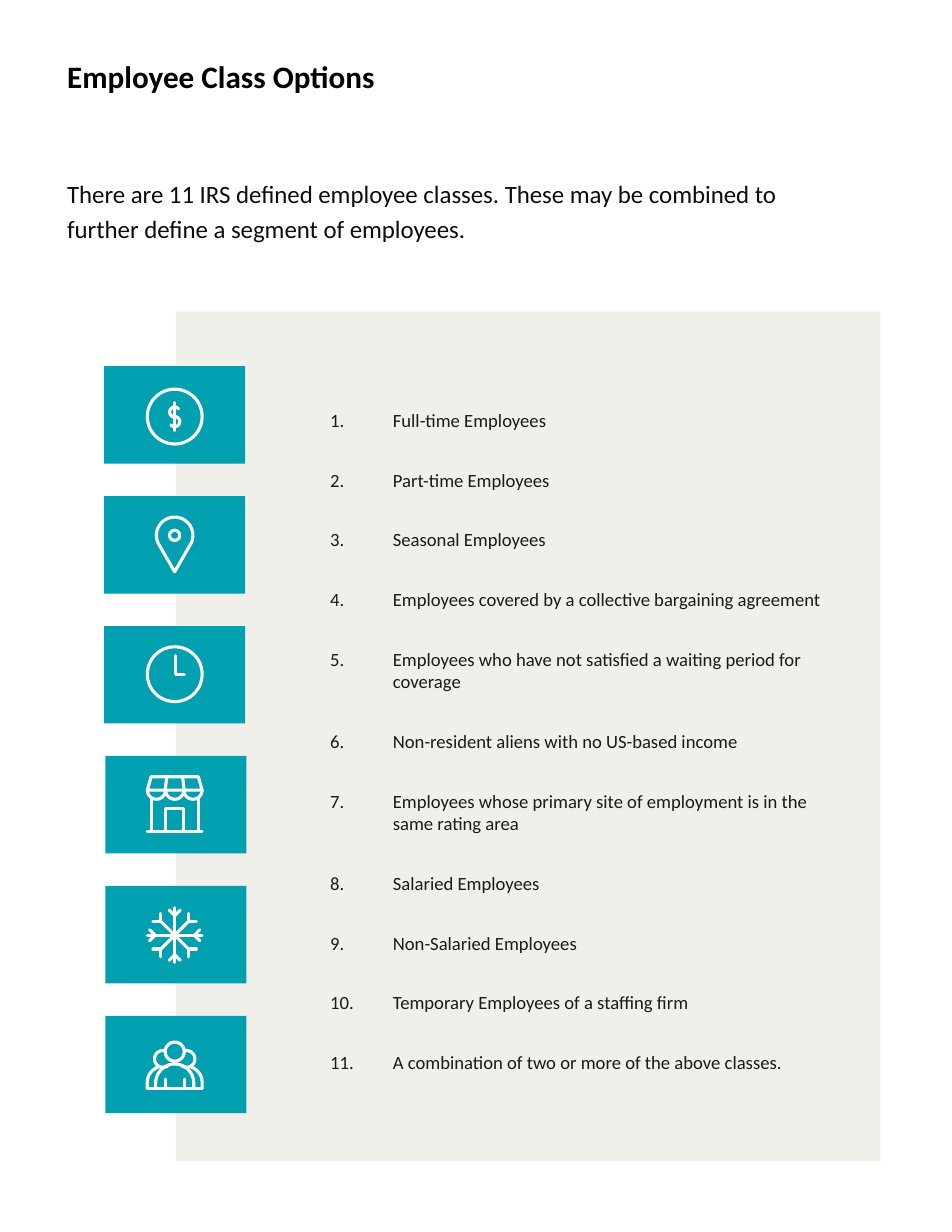
from math import cos, radians, sin

from lxml.etree import SubElement
from pptx import Presentation
from pptx.dml.color import RGBColor
from pptx.enum.shapes import MSO_SHAPE
from pptx.oxml.ns import qn
from pptx.util import Inches, Pt

BLACK = RGBColor(0x00, 0x00, 0x00)
INK = RGBColor(0x0B, 0x0C, 0x11)
LIST_INK = RGBColor(0x1A, 0x1A, 0x1A)
PANEL = RGBColor(0xF0, 0xEF, 0xE9)
TEAL = RGBColor(0x00, 0xA0, 0xB0)
WHITE = RGBColor(0xFF, 0xFF, 0xFF)

TILE_TOP, TILE_STEP = 3.27, 1.16
ICON_X = 1.56
RADIUS = 24.5  # half an icon, in hundredths of an inch

CLASSES = [
    "Full-time Employees",
    "Part-time Employees",
    "Seasonal Employees",
    "Employees covered by a collective bargaining agreement",
    "Employees who have not satisfied a waiting period for coverage",
    "Non-resident aliens with no US-based income",
    "Employees whose primary site of employment is in the same rating area",
    "Salaried Employees",
    "Non-Salaried Employees",
    "Temporary Employees of a staffing firm",
    "A combination of two or more of the above classes.",
]


def add_rect(s, left, top, width, height, color):
    sp = s.shapes.add_shape(MSO_SHAPE.RECTANGLE, Inches(left), Inches(top),
                            Inches(width), Inches(height))
    sp.shadow.inherit = False
    sp.fill.solid()
    sp.fill.fore_color.rgb = color
    sp.line.fill.background()


def number_paragraph(p, indent):
    pPr = p._p.get_or_add_pPr()
    pPr.set("marL", str(Inches(indent)))
    pPr.set("indent", str(-Inches(indent)))
    SubElement(pPr, qn("a:buAutoNum"), type="arabicPeriod")


def add_text(s, lines, left, top, width, height, size, color, bold=False,
             inset=0.1, spacing=None, after=None, indent=None):
    """Add one paragraph per line; an indent makes it a numbered list."""
    tf = s.shapes.add_textbox(Inches(left), Inches(top),
                              Inches(width), Inches(height)).text_frame
    tf.word_wrap = True
    tf.margin_left = tf.margin_right = Inches(inset)
    for i, line in enumerate(lines):
        p = tf.add_paragraph() if i else tf.paragraphs[0]
        if spacing:
            p.line_spacing = spacing
        if after:
            p.space_after = Pt(after)
        if indent:
            number_paragraph(p, indent)
        r = p.add_run()
        r.text = line
        r.font.name = "Calibri"
        r.font.size = Pt(size)
        r.font.bold = bold
        r.font.color.rgb = color


def arc(cx, cy, radius, start=0, end=360):
    """Points along an arc; angles in degrees, clockwise from the right."""
    steps = max(2, round(abs(end - start) / 8))
    angles = [radians(start + (end - start) * i / steps)
              for i in range(steps + 1)]
    return [(cx + radius * cos(a), cy + radius * sin(a)) for a in angles]


def with_mirror(*strokes):
    """The strokes together with their reflections in the vertical axis."""
    return [*strokes, *([(-x, y) for x, y in line] for line in strokes)]


def dollar():
    letter = arc(0, -4, 4.5, -40, -270) + arc(0, 4.5, 4.5, -90, 140)
    return [arc(0, 0, RADIUS), [(0, -12.5), (0, 12.5)], letter]


def pin():
    top = arc(0, -8, 16.3, 155, 385)
    return [top + [(0, RADIUS), top[0]], arc(0, -8, 4.5)]


def clock():
    return [arc(0, 0, RADIUS), [(0.5, -16.5), (0.5, 0.5), (8.5, 0.5)]]


def store():
    edge, base = -12.5, RADIUS
    awning = [(-21, -base), (21, -base), (base, edge), (-base, edge),
              (-21, -base)]
    door = [(-8, base), (-8, 3.5), (8, 3.5), (8, base)]
    scallops = [arc(x, edge, 8.1, 0, 180) for x in (-16.3, 0, 16.3)]
    sides = with_mirror([(7, -base), (8.5, edge)], [(21, -5), (21, base)])
    return [awning, door, [(-base, base), (base, base)], *scallops, *sides]


def snowflake():
    strokes = []
    for angle in range(0, 360, 45):
        length = 17.5 if angle % 90 else RADIUS
        dx, dy = cos(radians(angle)), sin(radians(angle))
        x, y = 17.5 * dx, 17.5 * dy
        barbs = [(x + 7 * cos(radians(a)), y + 7 * sin(radians(a)))
                 for a in (angle - 45, angle + 45)]
        strokes += [[(0, 0), (length * dx, length * dy)],
                    [barbs[0], (x, y), barbs[1]]]
    return strokes


def people():
    floor = 20
    body = [(-17, floor), *arc(0, 15, 17, 180, 360), (17, floor)]
    shoulder = [(-RADIUS, floor), *arc(-10, 14.5, 14.5, 180, 250)]
    head = arc(-10.5, -6.5, 7.5, 275, 50)
    sides = with_mirror(shoulder, head, [(8.5, 11.5), (8.5, floor)])
    return [arc(0, -13, 8.5), body, [(-RADIUS, floor), (RADIUS, floor)],
            *sides]


def add_icon(s, strokes, center_y):
    """Draw all strokes as one white outline centred in the icon column."""
    lines = [[(Inches(ICON_X + x / 100), Inches(center_y + y / 100))
              for x, y in line] for line in strokes]
    builder = s.shapes.build_freeform(*lines[0][0])
    for i, line in enumerate(lines):
        if i:
            builder.move_to(*line[0])
        builder.add_line_segments(line[1:], close=False)
    sp = builder.convert_to_shape()
    sp.shadow.inherit = False
    sp.fill.background()
    sp.line.color.rgb = WHITE
    sp.line.width = Pt(2)
    ln = sp.line._get_or_add_ln()
    ln.set("cap", "rnd")
    SubElement(ln, qn("a:round"))


def main():
    prs = Presentation()
    prs.slide_width, prs.slide_height = Inches(8.5), Inches(11)
    s = prs.slides.add_slide(prs.slide_layouts[6])

    add_rect(s, 1.57, 2.78, 6.29, 7.59, PANEL)
    add_text(s, ["Employee Class Options"], 0.55, 0.46, 5.7, 0.44,
             size=20, color=BLACK, bold=True, inset=0.05)
    add_text(s, ["There are 11 IRS defined employee classes. These may be "
                 "combined to further define a segment of employees."],
             0.55, 1.49, 6.74, 0.73, size=16, color=INK, inset=0.05,
             spacing=1.2)
    add_text(s, CLASSES, 2.85, 3.6, 4.63, 6.29, size=12, color=LIST_INK,
             after=24, indent=0.56)

    icons = [(dollar, 3.72), (pin, 4.86), (clock, 6.02),
             (store, 7.18), (snowflake, 8.35), (people, 9.52)]
    for i, (icon, center_y) in enumerate(icons):
        left = 0.93 if i < 3 else 0.94
        add_rect(s, left, TILE_TOP + i * TILE_STEP, 1.26, 0.87, TEAL)
        add_icon(s, icon(), center_y)
    prs.save("out.pptx")


if __name__ == "__main__":
    main()
